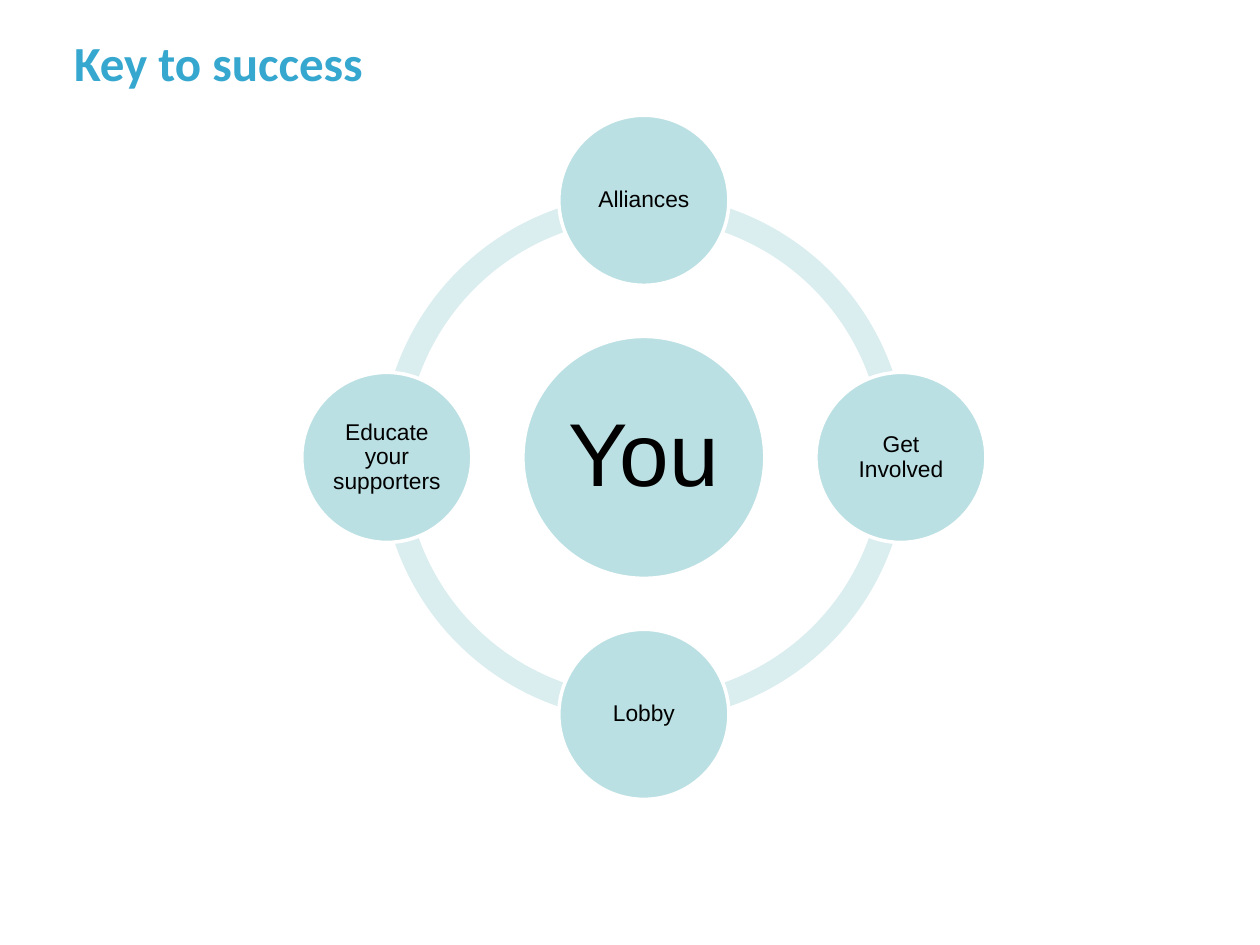
from math import cos, radians, sin

from pptx import Presentation
from pptx.dml.color import RGBColor
from pptx.enum.shapes import MSO_SHAPE as Shape
from pptx.enum.text import MSO_ANCHOR as Anchor, PP_ALIGN as Align
from pptx.util import Inches, Pt

TITLE_BLUE = RGBColor(0x36, 0xA7, 0xCF)
CIRCLE_TEAL = RGBColor(0xBB, 0xE0, 0xE3)
RING_TEAL = RGBColor(0xDA, 0xED, 0xEF)
WHITE = RGBColor(0xFF, 0xFF, 0xFF)
BLACK = RGBColor(0x00, 0x00, 0x00)

CENTER_X, CENTER_Y = 5.11, 3.63
ORBIT = 2.04
RING_SIZE = 4.18
QUARTER_TURN = 54
SATELLITES = ["Get Involved", "Lobby", "Educate your supporters", "Alliances"]


class RadialSlide:
    """Holds the slide and the style of a radial cycle diagram."""

    def __init__(self, slide):
        self.slide = slide

    def title(self, text):
        box = self.slide.shapes.add_textbox(Inches(0.49), Inches(0.21), Inches(9), Inches(1.25))
        box.text_frame.word_wrap = True
        paragraph = box.text_frame.paragraphs[0]
        paragraph.text = text
        self.style_font(paragraph, "Calibri", 28, TITLE_BLUE, bold=True)

    def style_font(self, paragraph, name, size, color, bold=False):
        font = paragraph.font
        font.name, font.size, font.bold = name, Pt(size), bold
        font.color.rgb = color

    def centered_shape(self, kind, x, y, size, color):
        shape = self.slide.shapes.add_shape(
            kind, Inches(x - size / 2), Inches(y - size / 2), Inches(size), Inches(size))
        shape.shadow.inherit = False
        shape.fill.solid()
        shape.fill.fore_color.rgb = color
        return shape

    def ring_quarter(self, index):
        arc = self.centered_shape(Shape.BLOCK_ARC, CENTER_X, CENTER_Y, RING_SIZE, RING_TEAL)
        arc.line.fill.background()
        arc.adjustments[0] = index * QUARTER_TURN
        arc.adjustments[1] = (index + 1) % 4 * QUARTER_TURN
        arc.adjustments[2] = 0.046

    def circle(self, text, x, y, size, font_size, inset):
        circle = self.centered_shape(Shape.OVAL, x, y, size, CIRCLE_TEAL)
        circle.line.color.rgb = WHITE
        circle.line.width = Pt(2)
        frame = circle.text_frame
        frame.word_wrap = True
        frame.vertical_anchor = Anchor.MIDDLE
        frame.margin_left = frame.margin_right = Inches(inset)
        frame.margin_top = frame.margin_bottom = Inches(inset)
        paragraph = frame.paragraphs[0]
        paragraph.text = text
        paragraph.alignment = Align.CENTER
        paragraph.line_spacing = 0.9
        self.style_font(paragraph, "Arial", font_size, BLACK)


def main():
    presentation = Presentation()
    presentation.slide_width, presentation.slide_height = Inches(10), Inches(7.5)
    radial = RadialSlide(presentation.slides.add_slide(presentation.slide_layouts[6]))
    radial.title("Key to success")
    for index in range(4):
        radial.ring_quarter(index)
    radial.circle("You", CENTER_X, CENTER_Y, 1.92, 51, 0.07)
    for index, text in enumerate(SATELLITES):
        angle = radians(90 * index)
        radial.circle(text, CENTER_X + ORBIT * cos(angle), CENTER_Y + ORBIT * sin(angle),
                      1.35, 13, 0.02)
    presentation.save("out.pptx")


if __name__ == "__main__":
    main()
